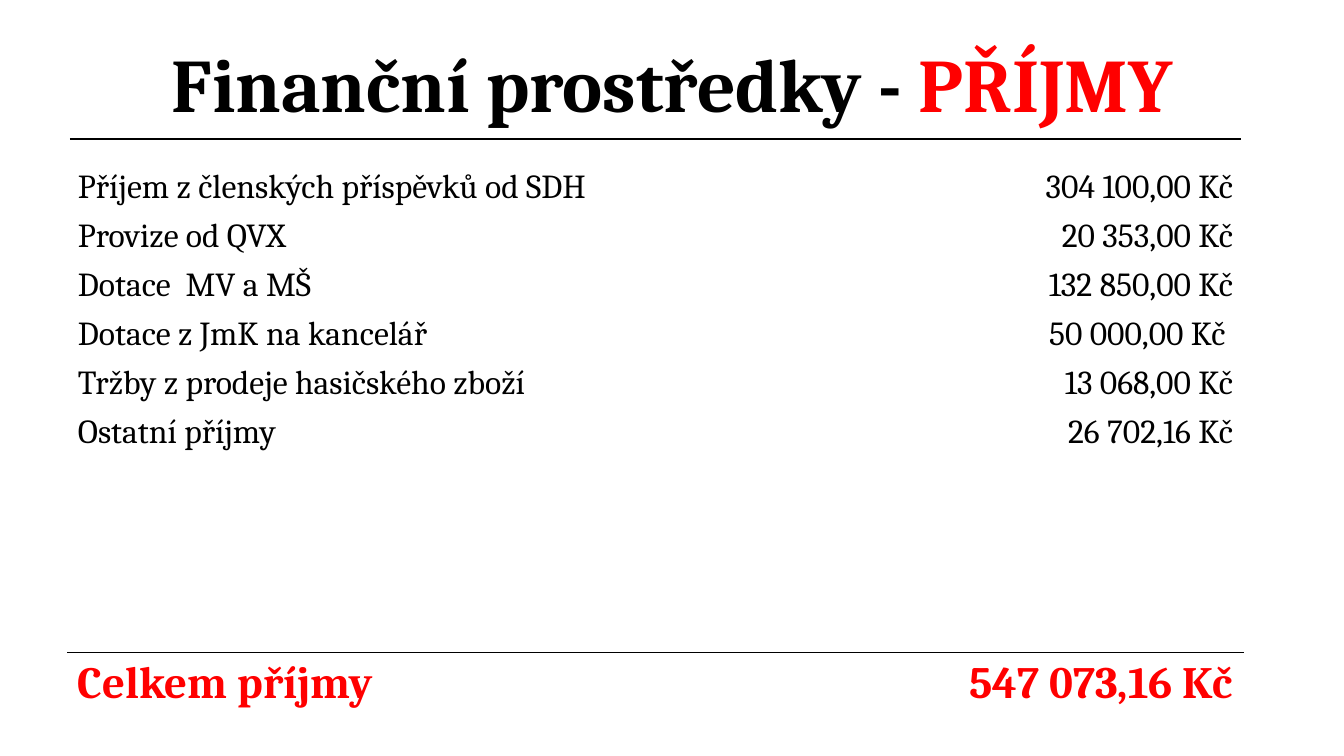
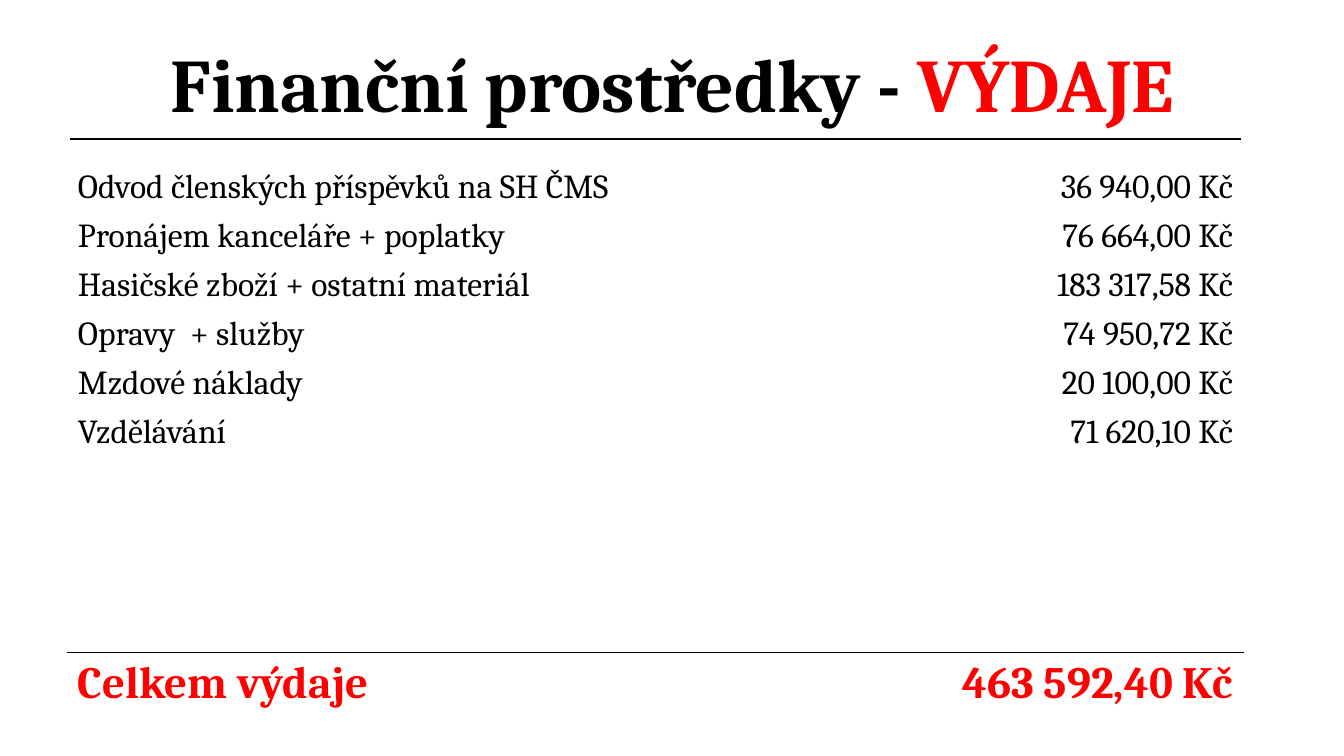
from dataclasses import dataclass

from lxml import etree
from pptx import Presentation
from pptx.dml.color import RGBColor
from pptx.enum.shapes import MSO_CONNECTOR
from pptx.enum.text import MSO_ANCHOR, PP_ALIGN
from pptx.oxml.ns import qn
from pptx.util import Emu, Pt

LEFT, CENTER, RIGHT = PP_ALIGN.LEFT, PP_ALIGN.CENTER, PP_ALIGN.RIGHT
MIDDLE = MSO_ANCHOR.MIDDLE
STRAIGHT = MSO_CONNECTOR.STRAIGHT


@dataclass(frozen=True)
class Theme:
    font: str = "Cambria"
    ink: str = "000000"
    accent: str = "FF0000"
    title: int = 54
    body: int = 24
    total: int = 32
    rule: int = 2
    border: int = 1


T = Theme()
SLIDE_W, SLIDE_H = 1344, 756
TITLE_BOX = (93, 41, 1159, 95)
RULE_BOX = (70, 139, 1171, 0)
TABLE_BOX = (68, 163, 1175, 552)
AMOUNT_W = 317
ROW_H = 49
TOTAL_ROW = 10  # index of the last row
CELL_PAD = 10

SLIDES = [
    ("PŘÍJMY", [
        ("Příjem z členských příspěvků od SDH", "304 100,00 Kč"),
        ("Provize od QVX", "20 353,00 Kč"),
        ("Dotace  MV a MŠ", "132 850,00 Kč"),
        ("Dotace z JmK na kancelář", "50 000,00 Kč "),
        ("Tržby z prodeje hasičského zboží", "13 068,00 Kč"),
        ("Ostatní příjmy", "26 702,16 Kč"),
    ], ("Celkem příjmy", "547 073,16 Kč")),
    ("VÝDAJE", [
        ("Odvod členských příspěvků na SH ČMS", "36 940,00 Kč"),
        ("Pronájem kanceláře + poplatky", "76 664,00 Kč"),
        ("Hasičské zboží + ostatní materiál", "183 317,58 Kč"),
        ("Opravy  + služby", "74 950,72 Kč"),
        ("Mzdové náklady", "20 100,00 Kč"),
        ("Vzdělávání", "71 620,10 Kč"),
    ], ("Celkem výdaje", "463 592,40 Kč")),
]


def px(n):
    return Emu(round(n * 914400 / 100.8))


def add_text(p, text, size=T.body, color=T.ink, bold=False, align=LEFT):
    p.alignment = align
    r = p.add_run()
    r.text = text
    f = r.font
    f.name, f.size, f.bold = T.font, Pt(size), bold
    f.color.rgb = RGBColor.from_string(color)


def add_border(cell, side):
    ln = etree.Element(qn(f"a:{side}"), w=str(Pt(T.border)))
    fill = etree.SubElement(ln, qn("a:solidFill"))
    etree.SubElement(fill, qn("a:srgbClr"), val=T.ink)
    cell._tc.get_or_add_tcPr().insert(0, ln)


def add_title(s, box, topic):
    tf = s.shapes.add_textbox(*map(px, box)).text_frame
    tf.word_wrap = True
    tf.vertical_anchor = MIDDLE
    p = tf.paragraphs[0]
    p.line_spacing = 0.9
    style = dict(size=T.title, bold=True, align=CENTER)
    add_text(p, "Finanční prostředky - ", **style)
    add_text(p, topic, color=T.accent, **style)


def add_rule(s, box):
    x, y, w, h = box
    line = s.shapes.add_connector(STRAIGHT, px(x), px(y), px(x + w), px(y + h))
    line.line.color.rgb = RGBColor.from_string(T.ink)
    line.line.width = Pt(T.rule)
    etree.SubElement(line._element.spPr, qn("a:effectLst"))


def add_ledger(s, box, items, total):
    w, h = box[2:]
    table = s.shapes.add_table(TOTAL_ROW + 1, 2, *map(px, box)).table
    table.first_row = table.horz_banding = False
    for col, width in zip(table.columns, (w - AMOUNT_W, AMOUNT_W)):
        col.width = px(width)
    for i, row in enumerate(table.rows):
        row.height = px(h - TOTAL_ROW * ROW_H if i == TOTAL_ROW else ROW_H)
        for cell in row.cells:
            cell.fill.background()
            cell.vertical_anchor = MIDDLE
            cell.margin_left = cell.margin_right = px(CELL_PAD)
            cell.margin_top = cell.margin_bottom = 0

    def fill_row(i, values, **style):
        for cell, text, align in zip(table.rows[i].cells, values, (LEFT, RIGHT)):
            add_text(cell.text_frame.paragraphs[0], text, align=align, **style)

    for i, item in enumerate(items):
        fill_row(i, item)
    fill_row(TOTAL_ROW, total, size=T.total, color=T.accent, bold=True)

    # Line between the items and the total
    for col in range(2):
        add_border(table.cell(TOTAL_ROW - 1, col), "lnB")
        add_border(table.cell(TOTAL_ROW, col), "lnT")


def main():
    prs = Presentation()
    prs.slide_width, prs.slide_height = px(SLIDE_W), px(SLIDE_H)
    for topic, items, total in SLIDES:
        s = prs.slides.add_slide(prs.slide_layouts[6])
        add_title(s, TITLE_BOX, topic)
        add_rule(s, RULE_BOX)
        add_ledger(s, TABLE_BOX, items, total)
    prs.save("out.pptx")


if __name__ == "__main__":
    main()
